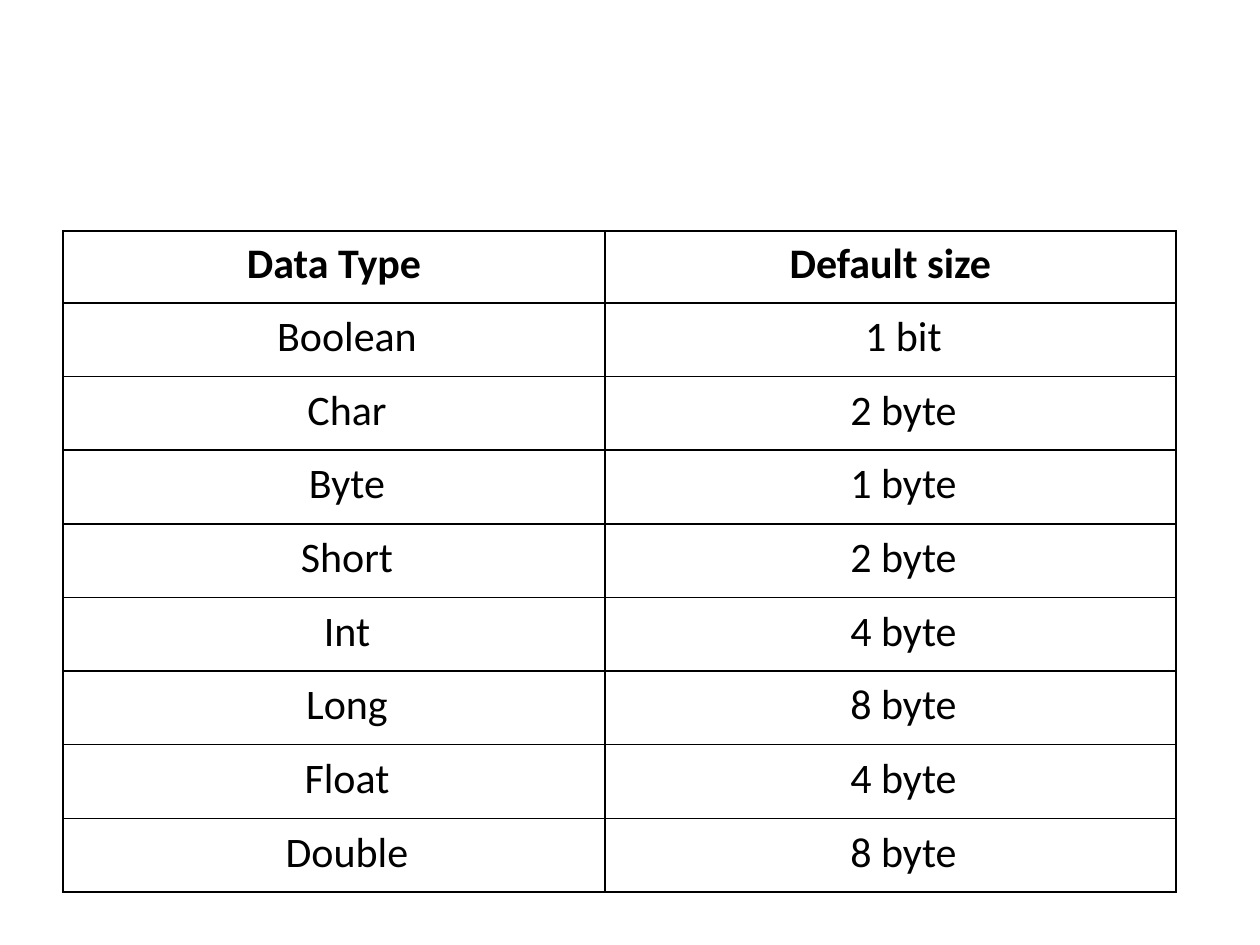
from lxml.etree import SubElement
from pptx import Presentation
from pptx.dml.color import RGBColor
from pptx.enum.text import PP_ALIGN
from pptx.oxml.ns import qn
from pptx.util import Emu, Pt

BLACK = RGBColor(0, 0, 0)
SCALE = 914400 // 126

SIZES = [
    ("Data Type", "Default size"),
    ("Boolean", "1 bit"),
    ("Char", "2 byte"),
    ("Byte", "1 byte"),
    ("Short", "2 byte"),
    ("Int", "4 byte"),
    ("Long", "8 byte"),
    ("Float", "4 byte"),
    ("Double", "8 byte"),
]


def px(count):
    return Emu(count * SCALE)


class Deck:
    font = "Calibri"
    size = Pt(24)
    color = BLACK
    border = Pt(1)
    side = px(9)
    drop = px(30)
    indent = px(26)

    def __init__(self, width, height):
        self.prs = Presentation()
        self.prs.slide_width = px(width)
        self.prs.slide_height = px(height)
        self.slide = self.prs.slides.add_slide(self.prs.slide_layouts[6])

    def frame(self, cell):
        """Draw the four borders of a cell."""
        props = cell._tc.get_or_add_tcPr()
        for index, tag in enumerate(("a:lnL", "a:lnR", "a:lnT", "a:lnB")):
            line = props.makeelement(qn(tag), {"w": str(self.border)})
            fill = SubElement(line, qn("a:solidFill"))
            SubElement(fill, qn("a:srgbClr"), val=str(self.color))
            props.insert(index, line)

    def cell(self, cell, text, head):
        cell.fill.background()
        self.frame(cell)
        cell.margin_left = cell.margin_right = self.side
        cell.margin_top = 0 if head else self.drop
        cell.margin_bottom = 0
        para = cell.text_frame.paragraphs[0]
        para.text = text
        para.alignment = PP_ALIGN.CENTER
        para.line_spacing = 1.15 if head else Pt(17.2)
        if not head:
            para._p.get_or_add_pPr().set("marL", str(self.indent))
        font = para.runs[0].font
        font.name, font.size, font.bold = self.font, self.size, head
        font.color.rgb = self.color

    def table(self, left, top, widths, head, body, data):
        """Add a table whose body rows share the body height equally."""
        shape = self.slide.shapes.add_table(
            len(data), len(widths), px(left), px(top),
            px(sum(widths)), px(head + body))
        table = shape.table
        table.first_row = table.horz_banding = False
        for col, width in zip(table.columns, widths):
            col.width = px(width)
        for i, (row, texts) in enumerate(zip(table.rows, data)):
            row.height = Emu(px(body) // (len(data) - 1)) if i else px(head)
            for cell, text in zip(row.cells, texts):
                self.cell(cell, text, i == 0)

    def save(self):
        self.prs.save("out.pptx")


def main():
    deck = Deck(1260, 945)
    deck.table(63, 231, (542, 571), 72, 589, SIZES)
    deck.save()


if __name__ == "__main__":
    main()
